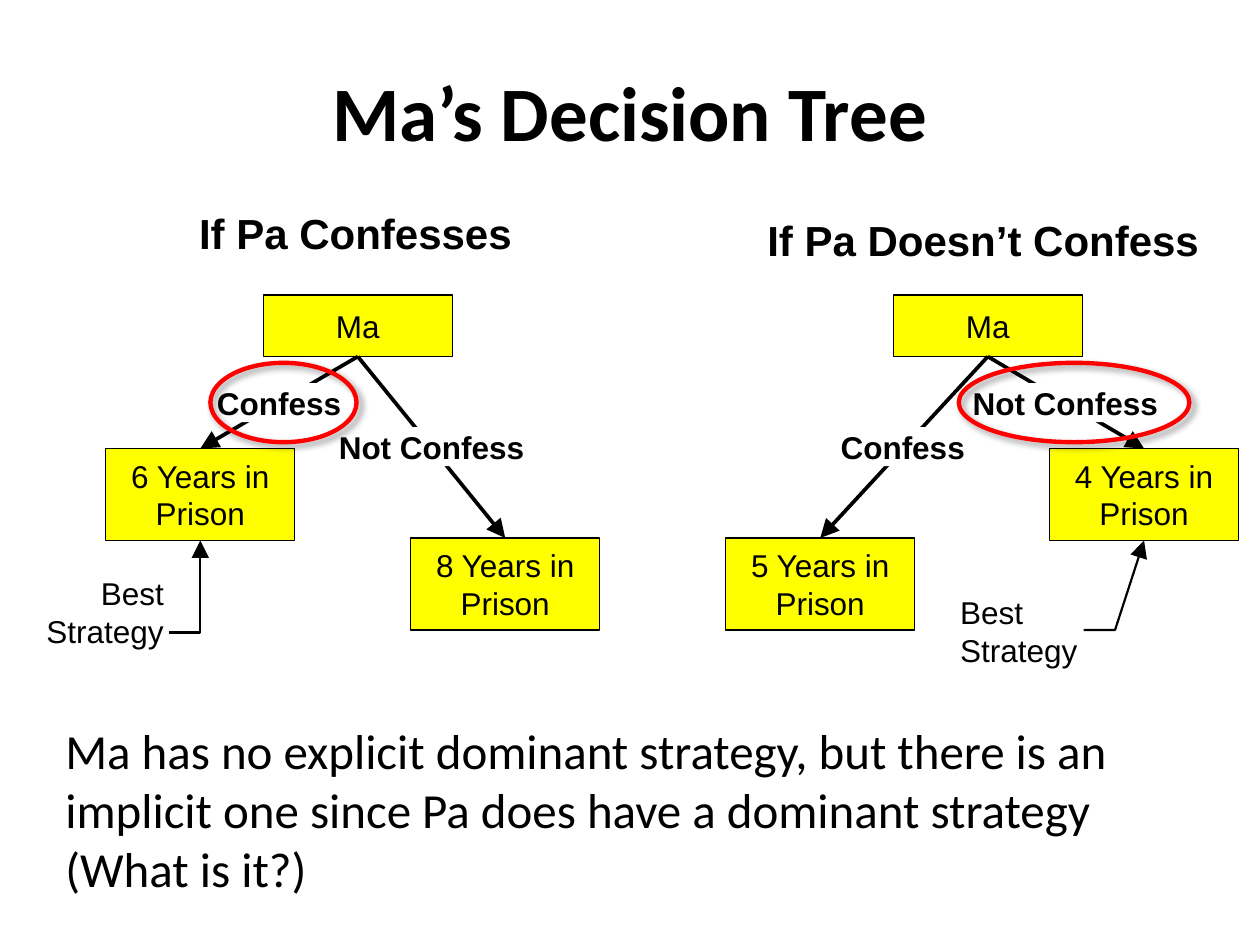
from lxml.etree import SubElement
from pptx import Presentation
from pptx.dml.color import RGBColor
from pptx.enum.shapes import MSO_CONNECTOR, MSO_SHAPE
from pptx.enum.text import MSO_ANCHOR, PP_ALIGN
from pptx.oxml.ns import qn
from pptx.util import Inches, Pt

BLACK, WHITE, YELLOW, RED = "000000", "FFFFFF", "FFFF00", "FF0000"
LEFT, CENTER, RIGHT = PP_ALIGN.LEFT, PP_ALIGN.CENTER, PP_ALIGN.RIGHT
TITLE = "Ma’s Decision Tree"
CONCLUSION = ("Ma has no explicit dominant strategy, but there is an implicit one "
              "since Pa does have a dominant strategy (What is it?)")

BOX_W, ROOT_H, OUTCOME_H = 1.5, 0.49, 0.73
ROOT_TOP = 2.34
LABEL_W = {"Confess": 1.01, "Not Confess": 1.49}
LABEL_H = 0.31

# Branch: choice, label left and top, outcome, outcome left and top
TREES = [
    {"heading": "If Pa Confesses", "heading_at": (1.58, 1.65, 2.51, 0.4),
     "root_left": 2.09,
     "branches": [("Not Confess", 2.68, 3.39, "8 Years in Prison", 3.26, 4.27),
                  ("Confess", 1.71, 3.04, "6 Years in Prison", 0.84, 3.56)],
     "best_at": (0.3, 4.56, 1, 0.6), "best_align": RIGHT,
     "pointer": [(1.34, 5.02), (1.59, 5.02), (1.59, 4.29)],
     "ring": (1.67, 2.88, 1.16, 0.63)},
    {"heading": "If Pa Doesn’t Confess", "heading_at": (6.09, 1.7, 3.57, 0.4),
     "root_left": 7.09,
     "branches": [("Confess", 6.66, 3.39, "5 Years in Prison", 5.76, 4.27),
                  ("Not Confess", 7.71, 3.04, "4 Years in Prison", 8.33, 3.56)],
     "best_at": (7.62, 4.71, 1, 0.6), "best_align": LEFT,
     "pointer": [(8.6, 5), (8.85, 5), (9.08, 4.29)],
     "ring": (7.61, 2.88, 1.83, 0.63)},
]


def rgb(color):
    return RGBColor.from_string(color)


def write(s, text, size, font="Arial", bold=False, align=LEFT,
          anchor=MSO_ANCHOR.TOP, inset=(0, 0), wrap=True):
    tf = s.text_frame
    tf.word_wrap = wrap
    tf.vertical_anchor = anchor
    tf.margin_left = tf.margin_right = Inches(inset[0])
    tf.margin_top = tf.margin_bottom = Inches(inset[1])
    p = tf.paragraphs[0]
    p.text, p.alignment = text, align
    p.font.name, p.font.size, p.font.bold = font, Pt(size), bold
    p.font.color.rgb = rgb(BLACK)


def add_text(slide, at, text, size, **style):
    write(slide.shapes.add_textbox(*map(Inches, at)), text, size, **style)


def add_preset(slide, kind, at, fill=None, line=None, width=0.75):
    s = slide.shapes.add_shape(kind, *map(Inches, at))
    s.shadow.inherit = False
    if fill:
        s.fill.solid()
        s.fill.fore_color.rgb = rgb(fill)
    else:
        s.fill.background()
    if line:
        s.line.color.rgb, s.line.width = rgb(line), Pt(width)
    else:
        s.line.fill.background()
    return s


def add_box(slide, at, text):
    s = add_preset(slide, MSO_SHAPE.RECTANGLE, at, YELLOW, BLACK)
    write(s, text, 18, align=CENTER, anchor=MSO_ANCHOR.MIDDLE, inset=(0.1, 0))


def style_arrow(s, width):
    s.line.color.rgb, s.line.width = rgb(BLACK), Pt(width)
    SubElement(s.line._get_or_add_ln(), qn("a:tailEnd"), type="triangle", w="lg", len="lg")


def add_arrow(slide, start, end):
    s = slide.shapes.add_connector(MSO_CONNECTOR.STRAIGHT, *map(Inches, start + end))
    style_arrow(s, 2.13)
    SubElement(s._element.spPr, qn("a:effectLst"))


def add_pointer(slide, points):
    start, *rest = [(Inches(x), Inches(y)) for x, y in points]
    builder = slide.shapes.build_freeform(*start)
    builder.add_line_segments(rest, close=False)
    s = builder.convert_to_shape()
    s.shadow.inherit = False
    s.fill.background()
    style_arrow(s, 1.25)


def add_ring(slide, at):
    """Red ellipse with a soft shadow around the best choice."""
    s = add_preset(slide, MSO_SHAPE.OVAL, at, line=RED, width=2.5)
    effects = s._element.spPr.find(qn("a:effectLst"))
    shadow = SubElement(effects, qn("a:outerShdw"), blurRad=str(Pt(4)), dist=str(Pt(3)),
                        dir=str(45 * 60000), algn="tl", rotWithShape="0")
    color = SubElement(shadow, qn("a:srgbClr"), val=BLACK)
    SubElement(color, qn("a:alpha"), val="40000")


def add_tree(slide, tree):
    add_text(slide, tree["heading_at"], tree["heading"], 24, bold=True, wrap=False)
    root_left = tree["root_left"]
    add_box(slide, (root_left, ROOT_TOP, BOX_W, ROOT_H), "Ma")
    fork = (root_left + BOX_W / 2, ROOT_TOP + ROOT_H)
    for choice, label_x, label_y, outcome, x, y in tree["branches"]:
        add_box(slide, (x, y, BOX_W, OUTCOME_H), outcome)
        add_arrow(slide, fork, (x + BOX_W / 2, y))
        label = add_preset(slide, MSO_SHAPE.RECTANGLE,
                           (label_x, label_y, LABEL_W[choice], LABEL_H), WHITE)
        write(label, choice, 18, bold=True, align=CENTER,
              anchor=MSO_ANCHOR.MIDDLE, wrap=False)
    add_pointer(slide, tree["pointer"])
    add_text(slide, tree["best_at"], "Best Strategy", 18, align=tree["best_align"])
    add_ring(slide, tree["ring"])


def main():
    prs = Presentation()
    prs.slide_width, prs.slide_height = Inches(10), Inches(7.5)
    slide = prs.slides.add_slide(prs.slide_layouts[6])
    add_text(slide, (0.75, 0.25, 8.5, 1.25), TITLE, 44, font="Calibri", bold=True,
             align=CENTER, anchor=MSO_ANCHOR.MIDDLE, inset=(0.1, 0.05))
    add_text(slide, (0.42, 5.67, 8.92, 1.51), CONCLUSION, 28, font="Calibri",
             inset=(0.1, 0.05))
    for tree in TREES:
        add_tree(slide, tree)
    prs.save("out.pptx")


if __name__ == "__main__":
    main()
